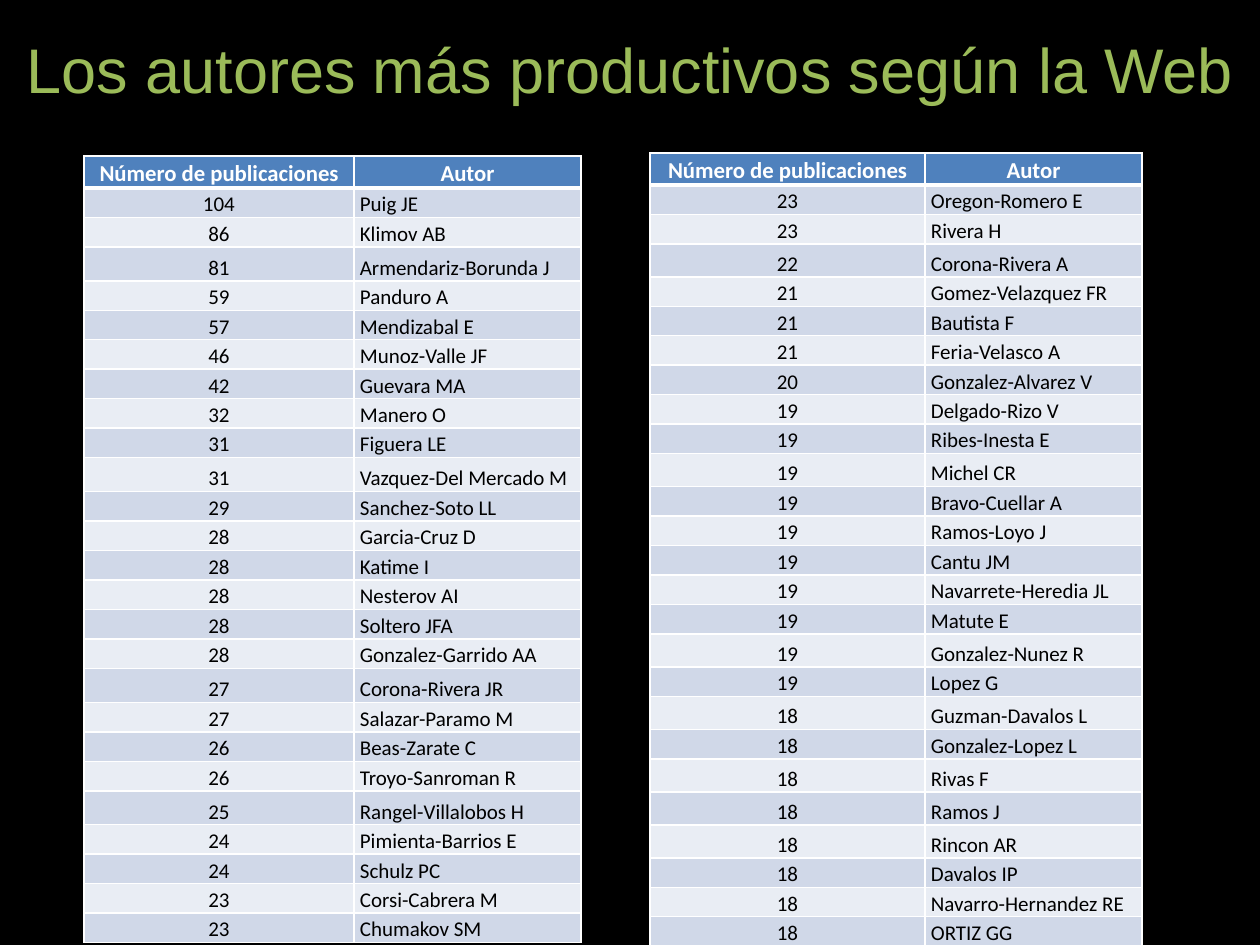
from lxml.etree import SubElement
from pptx import Presentation
from pptx.dml.color import RGBColor
from pptx.enum.text import MSO_ANCHOR, MSO_AUTO_SIZE, PP_ALIGN
from pptx.oxml.ns import qn
from pptx.util import Emu, Pt

BLACK = RGBColor(0x00, 0x00, 0x00)
WHITE = RGBColor(0xFF, 0xFF, 0xFF)
GREEN = RGBColor(0x9B, 0xBB, 0x59)
BLUE = RGBColor(0x4F, 0x81, 0xBD)
BANDS = (RGBColor(0xD0, 0xD8, 0xE8), RGBColor(0xE9, 0xED, 0xF4))

HEADINGS = ("Número de publicaciones", "Autor")
TOP_AUTHORS = [
    (104, "Puig JE"), (86, "Klimov AB"), (81, "Armendariz-Borunda J"),
    (59, "Panduro A"), (57, "Mendizabal E"), (46, "Munoz-Valle JF"),
    (42, "Guevara MA"), (32, "Manero O"), (31, "Figuera LE"),
    (31, "Vazquez-Del Mercado M"), (29, "Sanchez-Soto LL"), (28, "Garcia-Cruz D"),
    (28, "Katime I"), (28, "Nesterov AI"), (28, "Soltero JFA"),
    (28, "Gonzalez-Garrido AA"), (27, "Corona-Rivera JR"), (27, "Salazar-Paramo M"),
    (26, "Beas-Zarate C"), (26, "Troyo-Sanroman R"), (25, "Rangel-Villalobos H"),
    (24, "Pimienta-Barrios E"), (24, "Schulz PC"), (23, "Corsi-Cabrera M"),
    (23, "Chumakov SM"),
]
NEXT_AUTHORS = [
    (23, "Oregon-Romero E"), (23, "Rivera H"), (22, "Corona-Rivera A"),
    (21, "Gomez-Velazquez FR"), (21, "Bautista F"), (21, "Feria-Velasco A"),
    (20, "Gonzalez-Alvarez V"), (19, "Delgado-Rizo V"), (19, "Ribes-Inesta E"),
    (19, "Michel CR"), (19, "Bravo-Cuellar A"), (19, "Ramos-Loyo J"),
    (19, "Cantu JM"), (19, "Navarrete-Heredia JL"), (19, "Matute E"),
    (19, "Gonzalez-Nunez R"), (19, "Lopez G"), (18, "Guzman-Davalos L"),
    (18, "Gonzalez-Lopez L"), (18, "Rivas F"), (18, "Ramos J"),
    (18, "Rincon AR"), (18, "Davalos IP"), (18, "Navarro-Hernandez RE"),
    (18, "ORTIZ GG"),
]


def px(length):
    """Turn whole pixels into EMU at 126 px to the inch."""
    return Emu(round(length * 914400 / 126))


def write(frame, text, *, size, color, font="Calibri", bold=False,
          align=PP_ALIGN.LEFT, spacing=None):
    """Fill a text frame with one formatted paragraph."""
    paragraph = frame.paragraphs[0]
    paragraph.alignment = align
    if spacing:
        paragraph.line_spacing = spacing
    run = paragraph.add_run()
    run.text = text
    run.font.name = font
    run.font.size = Pt(size)
    run.font.bold = bold
    run.font.color.rgb = color


class AuthorSlide:
    """Hold the slide and the style of its title and author tables."""

    def __init__(self, presentation):
        """Add a black title-only slide."""
        self.slide = presentation.slides.add_slide(presentation.slide_layouts[5])
        background = self.slide.background.fill
        background.solid()
        background.fore_color.rgb = BLACK

    def title(self, text, left, top, width, height):
        """Place and format the title placeholder."""
        heading = self.slide.shapes.title
        heading.left, heading.top = px(left), px(top)
        heading.width, heading.height = px(width), px(height)
        frame = heading.text_frame
        frame.word_wrap = True
        frame.auto_size = MSO_AUTO_SIZE.NONE
        frame.vertical_anchor = MSO_ANCHOR.MIDDLE
        write(frame, text, size=36, color=GREEN, font="Arial", align=PP_ALIGN.CENTER)

    def borders(self, cell, bottom):
        """Draw white cell borders with the given bottom weight in points."""
        properties = cell._tc.get_or_add_tcPr()
        for side, weight in (("L", 1), ("R", 1), ("T", 1), ("B", bottom)):
            line = SubElement(properties, qn(f"a:ln{side}"), w=str(Pt(weight)))
            fill = SubElement(line, qn("a:solidFill"))
            SubElement(fill, qn("a:srgbClr"), val=str(WHITE))

    def cell(self, cell, text, fill, header, align):
        """Format one table cell and write its text."""
        cell.margin_left = cell.margin_right = px(6)
        cell.margin_top = cell.margin_bottom = 0
        cell.vertical_anchor = MSO_ANCHOR.MIDDLE if header else MSO_ANCHOR.BOTTOM
        self.borders(cell, bottom=3 if header else 1)
        cell.fill.solid()
        cell.fill.fore_color.rgb = fill
        write(cell.text_frame, text, size=13 if header else 12,
              color=WHITE if header else BLACK, bold=header, align=align, spacing=1.15)

    def table(self, authors, left, top, height, widths, row_height, tall_height, tall_rows):
        """Add a table of publication counts and authors."""
        records = [HEADINGS, *authors]
        holder = self.slide.shapes.add_table(
            len(records), len(widths), px(left), px(top), px(sum(widths)), px(height))
        table = holder.table
        for column, width in zip(table.columns, widths):
            column.width = px(width)
        for index, record in enumerate(records):
            header = index == 0
            table.rows[index].height = px(tall_height if index in tall_rows else row_height)
            fill = BLUE if header else BANDS[(index - 1) % 2]
            for position, value in enumerate(record):
                centred = header or position == 0
                self.cell(table.cell(index, position), str(value), fill, header,
                          PP_ALIGN.CENTER if centred else PP_ALIGN.LEFT)
        holder.height = px(height)


def main():
    """Build and save the presentation."""
    presentation = Presentation()
    presentation.slide_width, presentation.slide_height = px(1260), px(945)
    ranking = AuthorSlide(presentation)
    ranking.title("Los autores más productivos según la Web", 0, -9, 1260, 155)
    ranking.table(TOP_AUTHORS, 84, 156, 735, (270, 227), 16, 34, {3, 10, 17, 21})
    ranking.table(NEXT_AUTHORS, 650, 153, 780, (275, 217), 29, 33,
                  {3, 10, 16, 18, 20, 21, 22})
    presentation.save("out.pptx")


if __name__ == "__main__":
    main()
